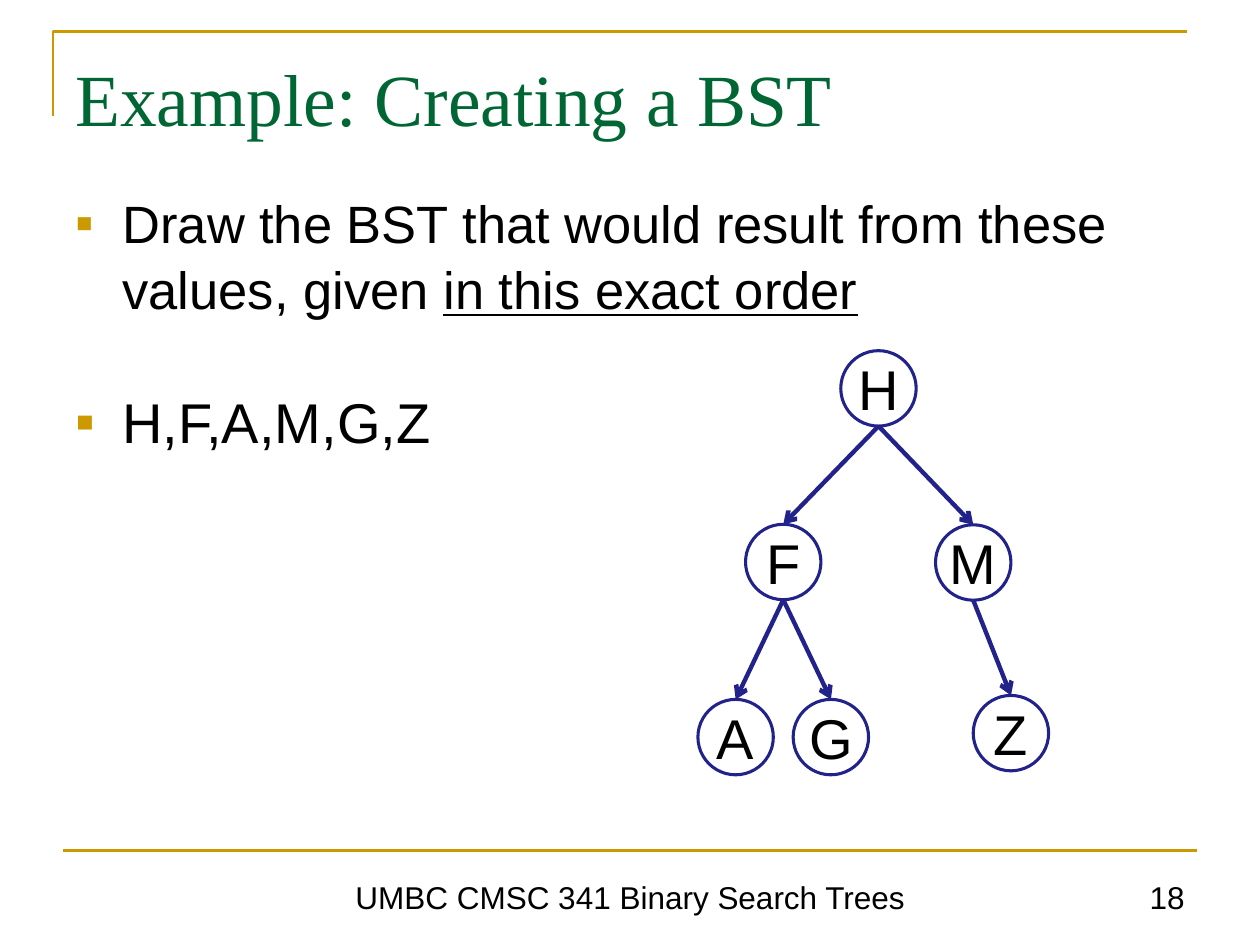
from lxml import etree
from pptx import Presentation
from pptx.dml.color import RGBColor
from pptx.enum.shapes import MSO_CONNECTOR, MSO_SHAPE
from pptx.enum.text import MSO_ANCHOR, PP_ALIGN
from pptx.oxml.ns import qn
from pptx.util import Cm, Pt

STRAIGHT = MSO_CONNECTOR.STRAIGHT
OVAL = MSO_SHAPE.OVAL
TOP, MIDDLE, BOTTOM = MSO_ANCHOR.TOP, MSO_ANCHOR.MIDDLE, MSO_ANCHOR.BOTTOM
LEFT, CENTER, RIGHT = PP_ALIGN.LEFT, PP_ALIGN.CENTER, PP_ALIGN.RIGHT

COLORS = {
    "gold": "CC9900",
    "green": "006633",
    "navy": "22228B",
    "black": "000000",
    "white": "FFFFFF",
}
NODE_SIZE = 1.52
# Each node: centre x and top y, in cm
NODES = {
    "H": (17.71, 7.07),
    "F": (15.79, 10.57),
    "M": (19.62, 10.58),
    "A": (14.83, 14.1),
    "G": (16.75, 14.1),
    "Z": (20.38, 14.02),
}
EDGES = ["HF", "HM", "FA", "FG", "MZ"]


def set_values(target, values):
    for name, value in values.items():
        setattr(target, name, value)


def color(name):
    return RGBColor.from_string(COLORS[name])


class SlideBuilder:
    def __init__(self, slide, font="Arial"):
        self.slide = slide
        self.font = font

    def style_line(self, shape, line_color, width):
        shape.line.color.rgb = color(line_color)
        shape.line.width = Pt(width)

    def add_text(self, paragraph, text, size, text_color="black", font=None, **extra):
        run = paragraph.add_run()
        run.text = text
        set_values(run.font, {"name": font or self.font, "size": Pt(size), **extra})
        run.font.color.rgb = color(text_color)

    def text_box(self, left, top, width, height, anchor=TOP, inset_top=0.13):
        box = self.slide.shapes.add_textbox(Cm(left), Cm(top), Cm(width), Cm(height))
        set_values(box.text_frame, {
            "word_wrap": True, "vertical_anchor": anchor,
            "margin_left": Cm(0.25), "margin_right": Cm(0.25),
            "margin_top": Cm(inset_top), "margin_bottom": Cm(0.13),
        })
        return box.text_frame

    def label(self, box, text, size, align=LEFT, anchor=TOP, inset_top=0.13, **style):
        paragraph = self.text_box(*box, anchor, inset_top).paragraphs[0]
        paragraph.alignment = align
        self.add_text(paragraph, text, size, **style)

    def bullet(self, paragraph, space_before=0):
        """Give the paragraph a gold square bullet with a hanging indent."""
        set_values(paragraph, {"space_before": Pt(space_before), "line_spacing": 1.05})
        properties = paragraph._p.get_or_add_pPr()
        properties.set("marL", str(Cm(0.95)))
        properties.set("indent", str(-Cm(0.95)))
        bullet_color = etree.SubElement(properties, qn("a:buClr"))
        etree.SubElement(bullet_color, qn("a:srgbClr"), val=COLORS["gold"])
        etree.SubElement(properties, qn("a:buFont"), typeface=self.font)
        etree.SubElement(properties, qn("a:buChar"), char="▪")

    def corner(self, left, top, right, bottom):
        """Draw an open outline along the left and top edges."""
        builder = self.slide.shapes.build_freeform(Cm(left), Cm(bottom))
        builder.add_line_segments([(Cm(left), Cm(top)), (Cm(right), Cm(top))], close=False)
        shape = builder.convert_to_shape()
        shape.shadow.inherit = False
        shape.fill.background()
        self.style_line(shape, "gold", 1.5)

    def connector(self, start, end, line_color, width, arrow=False):
        line = self.slide.shapes.add_connector(STRAIGHT, *map(Cm, (*start, *end)))
        self.style_line(line, line_color, width)
        if arrow:
            etree.SubElement(line.line._get_or_add_ln(), qn("a:tailEnd"), type="arrow")
        etree.SubElement(line._element.spPr, qn("a:effectLst"))

    def node(self, text, center_x, top):
        size = Cm(NODE_SIZE)
        circle = self.slide.shapes.add_shape(
            OVAL, Cm(center_x - NODE_SIZE / 2), Cm(top), size, size)
        circle.shadow.inherit = False
        circle.fill.solid()
        circle.fill.fore_color.rgb = color("white")
        self.style_line(circle, "navy", 1.75)
        frame = circle.text_frame
        set_values(frame, {
            "word_wrap": False, "vertical_anchor": MIDDLE,
            "margin_left": 0, "margin_right": 0, "margin_top": 0, "margin_bottom": 0,
        })
        frame.paragraphs[0].alignment = CENTER
        self.add_text(frame.paragraphs[0], text, 32)


def main():
    presentation = Presentation()
    set_values(presentation, {"slide_width": Cm(25.4), "slide_height": Cm(19.05)})
    slide = presentation.slides.add_slide(presentation.slide_layouts[6])
    builder = SlideBuilder(slide)

    builder.corner(1.07, 0.64, 23.93, 2.34)
    builder.connector((1.27, 17.15), (24.13, 17.15), "gold", 1.5)
    builder.label((1.27, 0.76, 22.83, 2.82), "Example: Creating a BST", 42,
                  inset_top=0.31, text_color="green", font="Times New Roman")

    body = builder.text_box(1.27, 3.61, 22.83, 13.41, inset_top=0.17)
    task = body.paragraphs[0]
    builder.bullet(task)
    builder.add_text(task, "Draw the BST that would result from these values, given ", 30)
    builder.add_text(task, "in this exact order", 30, underline=True)
    values = body.add_paragraph()
    builder.bullet(values, space_before=37)
    builder.add_text(values, "H,F,A,M,G,Z", 32)

    builder.label((4.45, 17.35, 16.51, 1.24), "UMBC CMSC 341 Binary Search Trees", 18,
                  CENTER, BOTTOM)
    builder.label((18.21, 17.35, 5.92, 1.24), "18", 18, RIGHT, BOTTOM)

    for parent, child in EDGES:
        parent_x, parent_top = NODES[parent]
        builder.connector((parent_x, parent_top + NODE_SIZE), NODES[child],
                          "navy", 2.5, arrow=True)
    for name, position in NODES.items():
        builder.node(name, *position)

    presentation.save("out.pptx")


if __name__ == "__main__":
    main()
